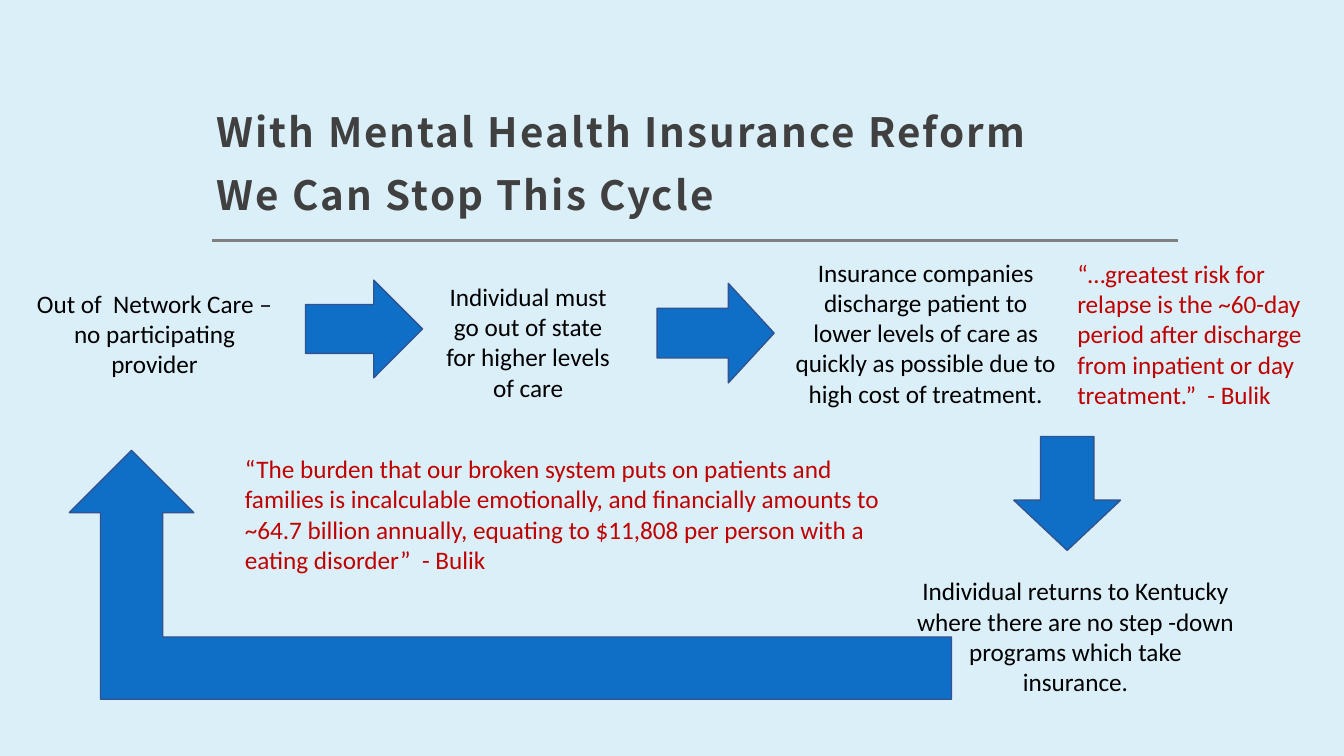
from dataclasses import dataclass

from lxml import etree
from pptx import Presentation
from pptx import util as u
from pptx.dml.color import RGBColor
from pptx.enum import shapes, text
from pptx.oxml.ns import qn


@dataclass
class Theme:
    back: str = "DBEFF9"
    head: str = "404040"
    rule: str = "808080"
    body: str = "000000"
    quote: str = "C00000"
    fill: str = "0F6FC6"
    edge: str = "31538F"
    head_font: str = "Noto Sans CJK JP"
    body_font: str = "Calibri"
    head_size: float = 28.8
    body_size: float = 18


theme = Theme()
rgb = RGBColor.from_string
kind = shapes.MSO_SHAPE

deck = Presentation()
deck.slide_width, deck.slide_height = u.Cm(33.87), u.Cm(19.05)
slide = deck.slides.add_slide(deck.slide_layouts[6])
slide.background.fill.solid()
slide.background.fill.fore_color.rgb = rgb(theme.back)


def add_text(words, box, color, font, size):
    """Add a wrapped one-paragraph text box and return its frame."""
    frame = slide.shapes.add_textbox(*map(u.Cm, box)).text_frame
    frame.word_wrap = True
    frame.text = words
    for run in frame.paragraphs[0].runs:
        run.font.name = font
        run.font.size = u.Pt(size)
        run.font.color.rgb = rgb(color)
    return frame


# Title and rule
rule = slide.shapes.add_connector(
    shapes.MSO_CONNECTOR.STRAIGHT, u.Cm(5.33), u.Cm(6.05), u.Cm(29.69), u.Cm(6.05))
rule.line.color.rgb = rgb(theme.rule)
rule.line.width = u.Pt(2)
etree.SubElement(rule._element.spPr, qn("a:effectLst"))

title = add_text("With Mental Health Insurance Reform\vWe Can Stop This Cycle",
                 (5.16, 2.03, 24.36, 3.73),
                 theme.head, theme.head_font, theme.head_size)
title.vertical_anchor = text.MSO_ANCHOR.BOTTOM
title.margin_left = title.margin_right = title.margin_top = u.Cm(0.3)
title.margin_bottom = u.Cm(0.25)
title.paragraphs[0].line_spacing = 1.3
for run in title.paragraphs[0].runs:
    run.font.bold = True
    run.font._element.set("spc", "150")

# Steps of the cycle
steps = [
    ("Out of  Network Care – no participating provider",
     (0.58, 7.14, 6.63, 2.57)),
    ("Individual must go out of state for higher levels of care",
     (10.95, 6.96, 4.72, 3.33)),
    ("Insurance companies discharge patient to lower levels of care "
     "as quickly as possible due to high cost of treatment.",
     (19.76, 6.35, 7.14, 4.11)),
    ("Individual returns to Kentucky where there are no step -down "
     "programs which take insurance.",
     (22.81, 14.38, 8.59, 3.33)),
]
for words, box in steps:
    frame = add_text(words, box, theme.body, theme.body_font, theme.body_size)
    frame.paragraphs[0].alignment = text.PP_ALIGN.CENTER

# Arrows between the steps
arrows = [
    (kind.RIGHT_ARROW, (7.7, 7.06, 2.95, 2.46), (0.5, 0.5)),
    (kind.RIGHT_ARROW, (16.56, 7.14, 2.95, 2.51), (0.5, 0.46)),
    (kind.DOWN_ARROW, (25.55, 11, 2.69, 2.87), (0.5, 0.47)),
    (kind.BENT_UP_ARROW, (1.75, 11.35, 22.23, 6.27), (0.25, 0.25, 0.25)),
]
for form, box, ratios in arrows:
    arrow = slide.shapes.add_shape(form, *map(u.Cm, box))
    for spot, ratio in enumerate(ratios):
        arrow.adjustments[spot] = ratio
    arrow.shadow.inherit = False
    arrow.fill.solid()
    arrow.fill.fore_color.rgb = rgb(theme.fill)
    arrow.line.color.rgb = rgb(theme.edge)
    arrow.line.width = u.Pt(1)
    if form == kind.BENT_UP_ARROW:
        arrow._element.spPr.find(qn("a:xfrm")).set("flipH", "1")

# Quotes
quotes = [
    ("“…greatest risk for relapse is the ~60-day period after discharge "
     "from inpatient or day treatment.”  - Bulik",
     (26.9, 6.38, 6.22, 4.11)),
    ("“The burden that our broken system puts on patients and families is "
     "incalculable emotionally, and financially amounts to ~64.7 billion "
     "annually, equating to $11,808 per person with a eating disorder”  - Bulik",
     (5.92, 11.3, 17.42, 3.33)),
]
for words, box in quotes:
    add_text(words, box, theme.quote, theme.body_font, theme.body_size)

deck.save("out.pptx")
